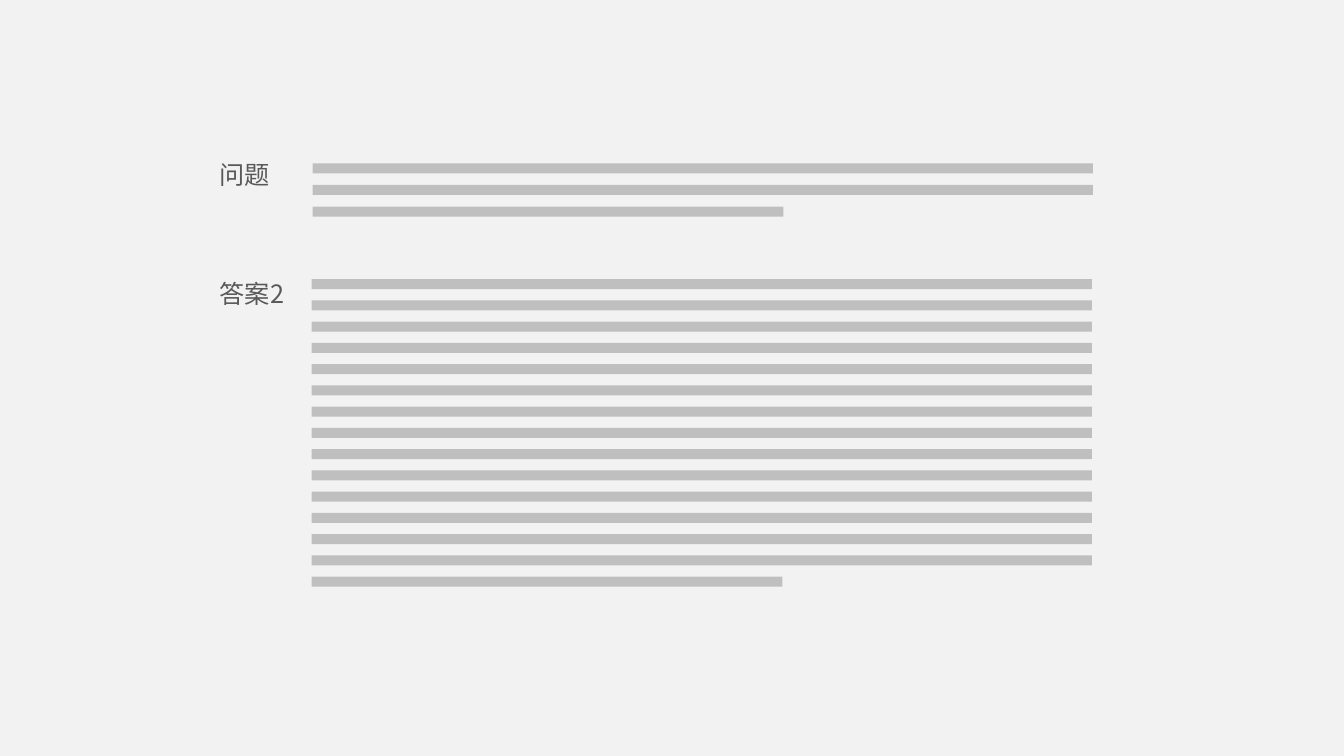
"""Build a question-and-answer wireframe slide with grey bars standing in for text."""
import pptx
import pptx.dml.color
import pptx.enum.shapes
import pptx.enum.text
import pptx.oxml.ns
import pptx.util
from lxml import etree

SECTIONS = [
    {"label": "问题", "label_top": 1.53, "label_width": 0.71, "wrap": False,
     "left": 3.10, "first": 1.62, "last": 2.05, "bars": 3},
    {"label": "答案2", "label_top": 2.71, "label_width": 0.86, "wrap": True,
     "left": 3.09, "first": 2.77, "last": 5.72, "bars": 15},
]
COLORS = {"background": "F2F2F2", "bar": "BFBFBF", "label": "595959"}
FONT = "Noto Sans CJK SC"
LABEL_LEFT, LABEL_HEIGHT = 2.08, 0.4
FULL_WIDTH, SHORT_WIDTH, BAR_HEIGHT = 7.74, 4.67, 0.1


def color(name):
    return pptx.dml.color.RGBColor.from_string(COLORS[name])


def inches(*lengths):
    return [pptx.util.Inches(length) for length in lengths]


def add_label(shapes, section):
    sp = shapes.add_textbox(*inches(LABEL_LEFT, section["label_top"],
                                    section["label_width"], LABEL_HEIGHT))
    tf = sp.text_frame
    tf.word_wrap = section["wrap"]
    if not section["wrap"]:
        tf.auto_size = pptx.enum.text.MSO_AUTO_SIZE.SHAPE_TO_FIT_TEXT
    p = tf.paragraphs[0]
    p.text = section["label"]
    p.font.size = pptx.util.Pt(18)
    p.font.name = FONT
    p.font.color.rgb = color("label")
    r = p.runs[0]
    ea = etree.SubElement(r._r.get_or_add_rPr(), pptx.oxml.ns.qn("a:ea"))
    ea.set("typeface", FONT)


def add_bars(shapes, section):
    step = (section["last"] - section["first"]) / (section["bars"] - 1)
    for row in range(section["bars"]):
        width = SHORT_WIDTH if row == section["bars"] - 1 else FULL_WIDTH
        sp = shapes.add_shape(
            pptx.enum.shapes.MSO_SHAPE.RECTANGLE,
            *inches(section["left"], section["first"] + row * step, width, BAR_HEIGHT))
        sp.shadow.inherit = False
        sp.fill.solid()
        sp.fill.fore_color.rgb = color("bar")
        sp.line.fill.background()


def main():
    prs = pptx.Presentation()
    prs.slide_width, prs.slide_height = inches(13.33, 7.5)
    s = prs.slides.add_slide(prs.slide_layouts[6])
    s.background.fill.solid()
    s.background.fill.fore_color.rgb = color("background")
    for section in SECTIONS:
        add_label(s.shapes, section)
        add_bars(s.shapes.add_group_shape().shapes, section)
    prs.save("out.pptx")


if __name__ == "__main__":
    main()
